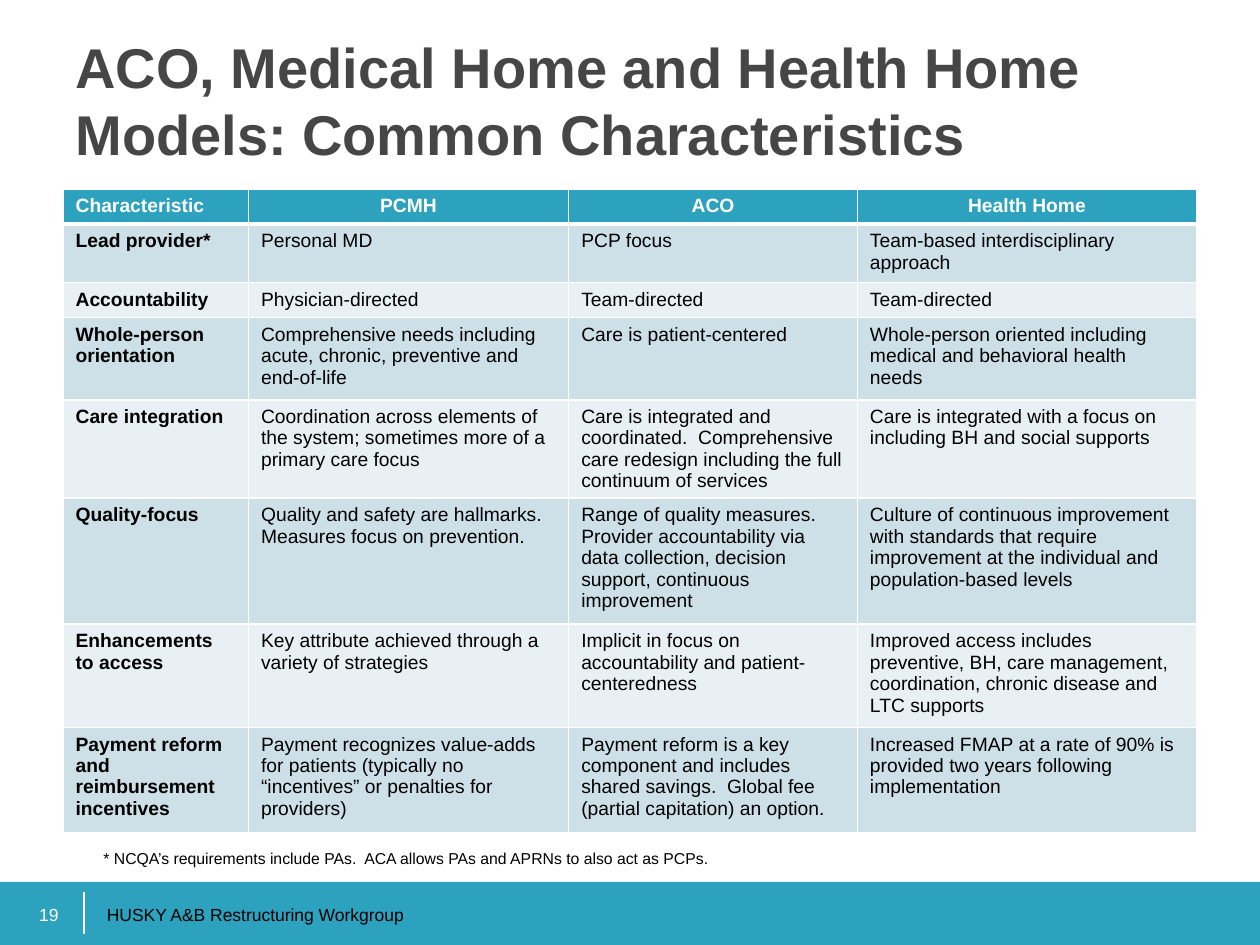
from pptx import Presentation
from pptx.dml.color import RGBColor
from pptx.enum.shapes import MSO_CONNECTOR as Conn, MSO_SHAPE as Shape
from pptx.enum.text import MSO_ANCHOR as Anchor, MSO_AUTO_SIZE as Fit, PP_ALIGN as Align
from pptx.oxml.ns import qn
from pptx.util import Pt
from lxml.etree import SubElement as Sub

TEAL = RGBColor(0x2D, 0xA2, 0xBF)
DARK = RGBColor(0xCD, 0xE0, 0xE8)
PALE = RGBColor(0xE8, 0xF0, 0xF4)
GREY = RGBColor(0x46, 0x46, 0x46)
WHITE = RGBColor(0xFF, 0xFF, 0xFF)
BLACK = RGBColor(0, 0, 0)

HEAD = ["Characteristic", "PCMH", "ACO", "Health Home"]
BODY = [
    ["Lead provider*", "Personal MD", "PCP focus",
     "Team-based interdisciplinary approach"],
    ["Accountability", "Physician-directed", "Team-directed", "Team-directed"],
    ["Whole-person orientation",
     "Comprehensive needs including acute, chronic, preventive and end-of-life",
     "Care is patient-centered",
     "Whole-person oriented including medical and behavioral health needs"],
    ["Care integration",
     "Coordination across elements of the system; sometimes more of a primary care focus",
     "Care is integrated and coordinated.  Comprehensive care redesign including "
     "the full continuum of services",
     "Care is integrated with a focus on including BH and social supports"],
    ["Quality-focus",
     "Quality and safety are hallmarks. Measures focus on prevention.",
     "Range of quality measures.  Provider accountability via data collection, "
     "decision support, continuous improvement",
     "Culture of continuous improvement with standards that require improvement "
     "at the individual and population-based levels"],
    ["Enhancements to access",
     "Key attribute achieved through a variety of strategies",
     "Implicit in focus on accountability and patient-centeredness",
     "Improved access includes preventive, BH, care management, coordination, "
     "chronic disease and LTC supports"],
    ["Payment reform and reimbursement incentives",
     "Payment recognizes value-adds for patients (typically no “incentives” or "
     "penalties for providers)",
     "Payment reform is a key component and includes shared savings.  Global fee "
     "(partial capitation) an option.",
     "Increased FMAP at a rate of 90% is provided two years following implementation"],
]
WIDTHS = [106, 183, 165, 194]
HEIGHTS = [20, 33.5, 20, 47, 47, 72, 59, 60]


def write(frame, text, size, color, bold=False, align=Align.LEFT):
    para = frame.paragraphs[0]
    para.alignment = align
    run = para.add_run()
    run.text = text
    run.font.name = "Arial"
    run.font.size = Pt(size)
    run.font.bold = bold
    run.font.color.rgb = color


def edge(cell, side, width):
    line = Sub(cell._tc.get_or_add_tcPr(), qn("a:" + side), w=str(Pt(width)))
    fill = Sub(line, qn("a:solidFill"))
    Sub(fill, qn("a:srgbClr"), val=str(WHITE))


prs = Presentation()
prs.slide_width, prs.slide_height = Pt(720), Pt(540)
slide = prs.slides.add_slide(prs.slide_layouts[6])
shapes = slide.shapes

# Footer band and divider
band = shapes.add_shape(Shape.RECTANGLE, Pt(0), Pt(504), Pt(720), Pt(36))
band.shadow.inherit = False
band.fill.solid()
band.fill.fore_color.rgb = TEAL
band.line.fill.background()
rule = shapes.add_connector(Conn.STRAIGHT, Pt(48), Pt(510), Pt(48), Pt(534))
rule.line.color.rgb = WHITE
rule.line.width = Pt(1)
Sub(rule._element.spPr, qn("a:effectLst"))

# Comparison table
rows = [HEAD] + BODY
frame = shapes.add_table(len(rows), len(HEAD), Pt(36), Pt(108), Pt(648), Pt(374.5))
table = frame.table
for col, width in zip(table.columns, WIDTHS):
    col.width = Pt(width)
for row, height in zip(table.rows, HEIGHTS):
    row.height = Pt(height)
for i, texts in enumerate(rows):
    for j, text in enumerate(texts):
        cell = table.cell(i, j)
        # Thick rule under the header row, thin ones elsewhere
        edge(cell, "lnL", 1)
        edge(cell, "lnR", 1)
        edge(cell, "lnT", 3 if i == 1 else 1)
        edge(cell, "lnB", 3 if i == 0 else 1)
        cell.fill.solid()
        cell.fill.fore_color.rgb = TEAL if i == 0 else DARK if i % 2 else PALE
        write(cell.text_frame, text, 11, WHITE if i == 0 else BLACK,
              i == 0 or j == 0, Align.CENTER if i == 0 and j else Align.LEFT)

# Title, footer, page number and footnote
LABELS = [
    ("ACO, Medical Home and Health Home Models: Common Characteristics",
     (36, 12, 648, 90), 32, GREY, True, Align.LEFT, Anchor.MIDDLE),
    ("HUSKY A&B Restructuring Workgroup",
     (54, 503.5, 324, 28.5), 10, BLACK, False, Align.LEFT, Anchor.BOTTOM),
    ("19", (12, 503.5, 28.5, 28.5), 10, WHITE, False, Align.RIGHT, Anchor.BOTTOM),
    ("* NCQA’s requirements include PAs.  ACA allows PAs and APRNs to also act as PCPs.",
     (52, 481.5, 378, 18), 9, BLACK, False, Align.LEFT, Anchor.TOP),
]
for text, place, size, color, bold, align, anchor in LABELS:
    box = shapes.add_textbox(*map(Pt, place))
    box.text_frame.word_wrap = True
    box.text_frame.vertical_anchor = anchor
    write(box.text_frame, text, size, color, bold, align)

# The footnote, last in the list, stays on one line
box.text_frame.word_wrap = False
box.text_frame.auto_size = Fit.SHAPE_TO_FIT_TEXT

prs.save("out.pptx")
